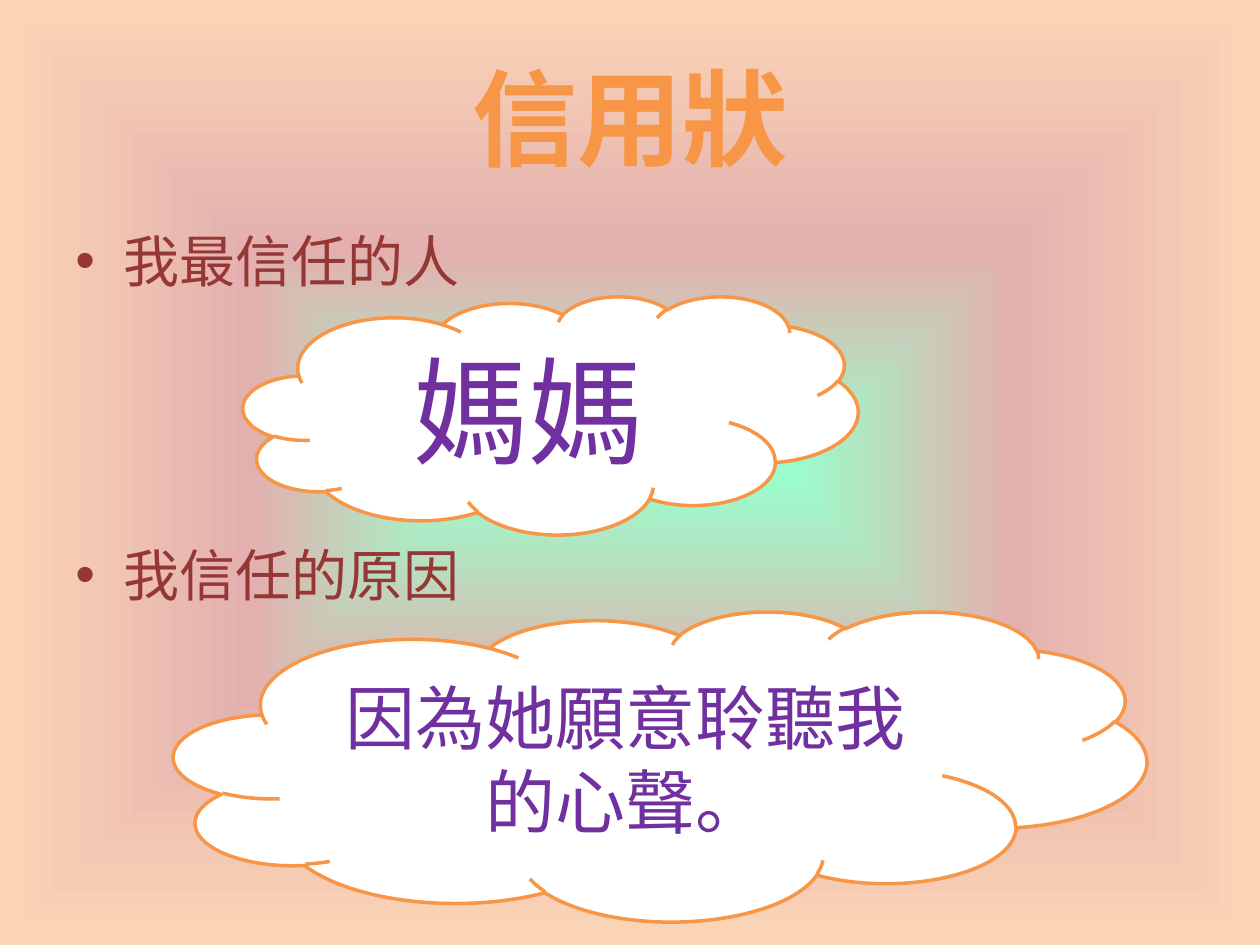
"""Build the letter-of-trust slide with two answer clouds."""
import pptx
import pptx.util
import pptx.dml.color
import pptx.enum.shapes
import pptx.enum.text
import pptx.oxml
import pptx.oxml.ns
from lxml import etree

Inches, Pt = pptx.util.Inches, pptx.util.Pt
qn = pptx.oxml.ns.qn
ALIGN = pptx.enum.text.PP_ALIGN
MIDDLE = pptx.enum.text.MSO_ANCHOR.MIDDLE


def color(value):
    return pptx.dml.color.RGBColor.from_string(value)


def add_run(p, text, size, fill, bold=False):
    r = p.add_run()
    r.text = text
    r.font.name = "Calibri"
    r.font.size = Pt(size)
    r.font.bold = bold
    r.font.color.rgb = color(fill)


prs = pptx.Presentation()
prs.slide_width, prs.slide_height = Inches(10), Inches(7.5)
s = prs.slides.add_slide(prs.slide_layouts[6])

s.background.fill.gradient()
grad = s.background._cSld.find(".//" + qn("a:gradFill"))
for child in list(grad):
    grad.remove(child)
stops = etree.SubElement(grad, qn("a:gsLst"))
for pos, value in [(0, "99FFCC"), (47, "E3B0AF"), (100, "FCD5B5")]:
    stop = etree.SubElement(stops, qn("a:gs"), pos=str(pos * 1000))
    etree.SubElement(stop, qn("a:srgbClr"), val=value)
shade = etree.SubElement(grad, qn("a:path"), path="shape")
etree.SubElement(shade, qn("a:fillToRect"), l="50000", t="50000", r="50000", b="50000")

title = s.shapes.add_textbox(Inches(0.5), Inches(0.3), Inches(9), Inches(1.25))
tf = title.text_frame
tf.word_wrap = True
tf.vertical_anchor = MIDDLE
p = tf.paragraphs[0]
p.alignment = ALIGN.CENTER
add_run(p, "信用狀", 60, "F79646", True)

body = s.shapes.add_textbox(Inches(0.5), Inches(1.75), Inches(9), Inches(4.95))
tf = body.text_frame
tf.word_wrap = True
for i, (text, gap) in enumerate([("我最信任的人", 6.4), ("我信任的原因", 140.8)]):
    p = tf.add_paragraph() if i else tf.paragraphs[0]
    p.space_before = Pt(gap)
    add_run(p, text, 32, "953735")
    pPr = p._p.get_or_add_pPr()
    pPr.set("marL", str(Inches(0.38)))
    pPr.set("indent", str(-Inches(0.38)))
    etree.SubElement(pPr, qn("a:buFont"), typeface="Arial")
    etree.SubElement(pPr, qn("a:buChar"), char="•")

for text, size, left, top, width, height in [
    ("媽媽", 66, 1.93, 2.35, 4.88, 1.89),
    ("因為她願意聆聽我的心聲。", 40, 1.38, 4.85, 7.72, 2.46),
]:
    cloud = s.shapes.add_shape(
        pptx.enum.shapes.MSO_SHAPE.CLOUD,
        Inches(left), Inches(top), Inches(width), Inches(height))
    cloud.shadow.inherit = False
    cloud.fill.solid()
    cloud.fill.fore_color.rgb = color("FFFFFF")
    cloud.line.color.rgb = color("F79646")
    cloud.line.width = Pt(2)
    tf = cloud.text_frame
    tf.word_wrap = True
    tf.vertical_anchor = MIDDLE
    p = tf.paragraphs[0]
    p.alignment = ALIGN.CENTER
    add_run(p, text, size, "7030A0")

prs.save("out.pptx")
